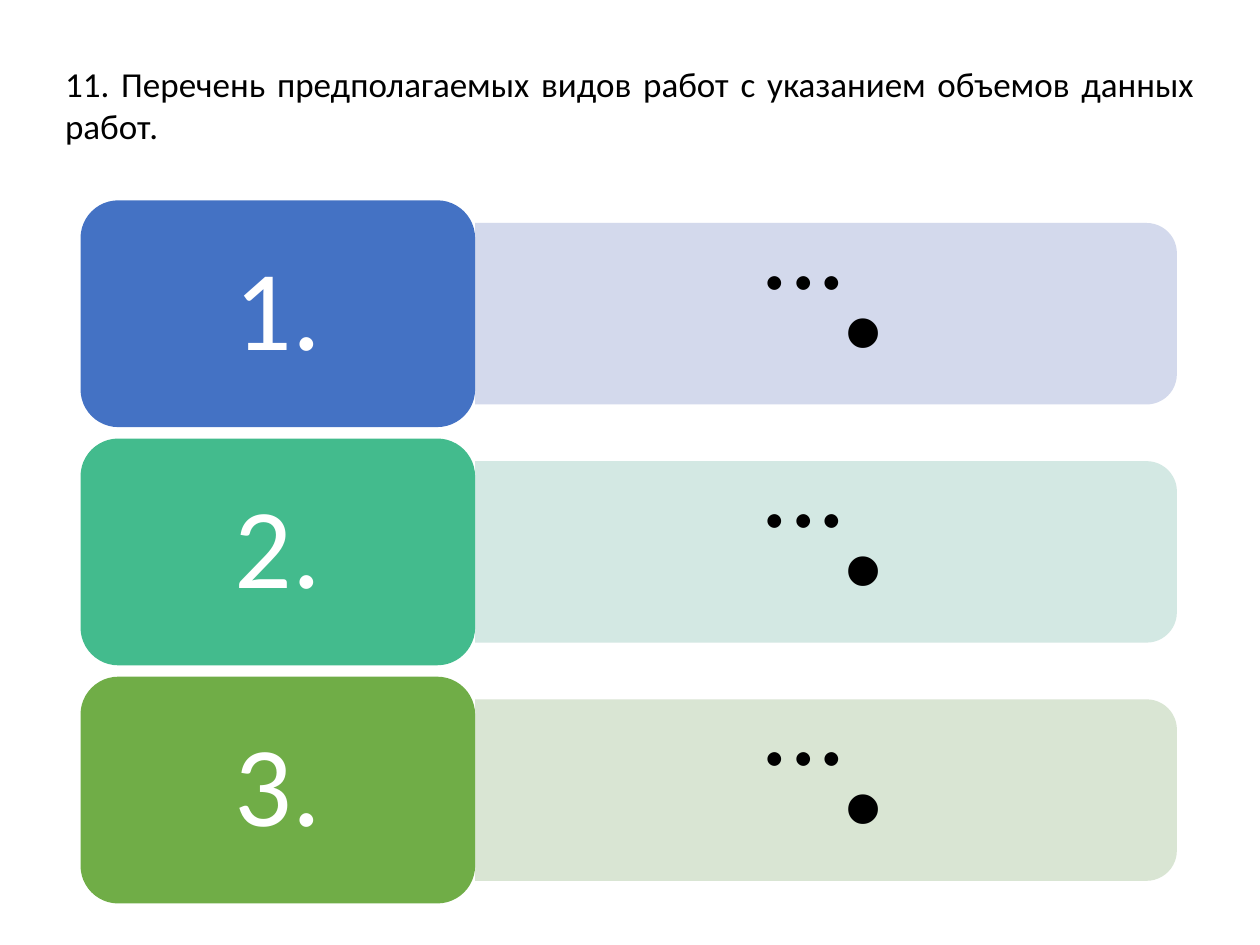
from lxml.etree import SubElement
from pptx import Presentation
from pptx.dml.color import RGBColor
from pptx.enum.shapes import MSO_SHAPE
from pptx.enum.text import MSO_ANCHOR, MSO_AUTO_SIZE, PP_ALIGN
from pptx.oxml.ns import qn
from pptx.util import Pt

COLORS = {
    "text": "000000", "label": "FFFFFF",
    "blue": "4472C4", "pale_blue": "CFD5EA",
    "teal": "43BB8D", "pale_teal": "CFE6E0",
    "green": "70AD47", "pale_green": "D5E3CF",
}
ROWS = [("1.", "blue", "pale_blue"), ("2.", "teal", "pale_teal"), ("3.", "green", "pale_green")]

CARD_LEFT, CARD_TOP, CARD_WIDTH, CARD_HEIGHT = 46, 114.5, 225.5, 129.6
ROW_STEP = 136.1
BAR_LENGTH, BAR_THICKNESS = 401, 103.7


class SlideBuilder:
    font = "Calibri"
    title_size = 20
    body_size = 65

    def __init__(self, slide):
        self.slide = slide

    def add_run(self, paragraph, text, size, color):
        run = paragraph.add_run()
        run.text = text
        run.font.name = self.font
        run.font.size = Pt(size)
        run.font.color.rgb = RGBColor.from_string(COLORS[color])

    def title(self, text, left, top, width, height):
        shape = self.slide.shapes.title
        shape.left, shape.top, shape.width, shape.height = map(Pt, (left, top, width, height))
        frame = shape.text_frame
        frame.word_wrap = True
        frame.auto_size = MSO_AUTO_SIZE.SHAPE_TO_FIT_TEXT
        frame.vertical_anchor = MSO_ANCHOR.TOP
        paragraph = frame.paragraphs[0]
        paragraph.alignment = PP_ALIGN.JUSTIFY
        self.add_run(paragraph, text, self.title_size, "text")

    def shape(self, kind, left, top, width, height, color):
        shape = self.slide.shapes.add_shape(kind, Pt(left), Pt(top), Pt(width), Pt(height))
        shape.shadow.inherit = False
        shape.fill.solid()
        shape.fill.fore_color.rgb = RGBColor.from_string(COLORS[color])
        shape.line.fill.background()
        return shape

    def body_paragraph(self, shape):
        """Set up the large body text of a shape and return its paragraph."""
        frame = shape.text_frame
        frame.word_wrap = True
        frame.vertical_anchor = MSO_ANCHOR.MIDDLE
        frame.margin_left = frame.margin_right = Pt(19.5)
        frame.margin_top = frame.margin_bottom = Pt(9.75)
        paragraph = frame.paragraphs[0]
        paragraph.line_spacing = 0.9
        return paragraph

    def card(self, label, left, top, color):
        card = self.shape(MSO_SHAPE.ROUNDED_RECTANGLE, left, top, CARD_WIDTH, CARD_HEIGHT, color)
        paragraph = self.body_paragraph(card)
        paragraph.alignment = PP_ALIGN.CENTER
        self.add_run(paragraph, label, self.body_size, "label")

    def bar(self, text, left, middle, color):
        """Add a bar turned on its side, with its text box turned upside down."""
        box = (left + (BAR_LENGTH - BAR_THICKNESS) / 2, middle - BAR_LENGTH / 2,
               BAR_THICKNESS, BAR_LENGTH)
        bar = self.shape(MSO_SHAPE.ROUND_2_SAME_RECTANGLE, *box, color)
        bar.rotation = 90
        fill_color = bar.fill._xPr.find(qn("a:solidFill"))[0]
        SubElement(fill_color, qn("a:alpha"), val="90000")

        text_box = self.slide.shapes.add_textbox(*map(Pt, box))
        text_box.rotation = 180
        paragraph = self.body_paragraph(text_box)
        paragraph.level = 1
        properties = paragraph._p.get_or_add_pPr()
        properties.set("marL", str(Pt(22.5)))
        properties.set("indent", str(-Pt(22.5)))
        SubElement(properties, qn("a:buChar"), char="•")
        self.add_run(paragraph, text, self.body_size, "text")


def main():
    presentation = Presentation()
    presentation.slide_width, presentation.slide_height = Pt(720), Pt(540)
    slide = presentation.slides.add_slide(presentation.slide_layouts[5])
    builder = SlideBuilder(slide)
    builder.title("11. Перечень предполагаемых видов работ с указанием объемов данных работ.",
                  30, 32, 660, 55.5)
    for index, (label, color, pale_color) in enumerate(ROWS):
        top = CARD_TOP + index * ROW_STEP
        builder.bar("…", CARD_LEFT + CARD_WIDTH, top + CARD_HEIGHT / 2, pale_color)
        builder.card(label, CARD_LEFT, top, color)
    presentation.save("out.pptx")


if __name__ == "__main__":
    main()
